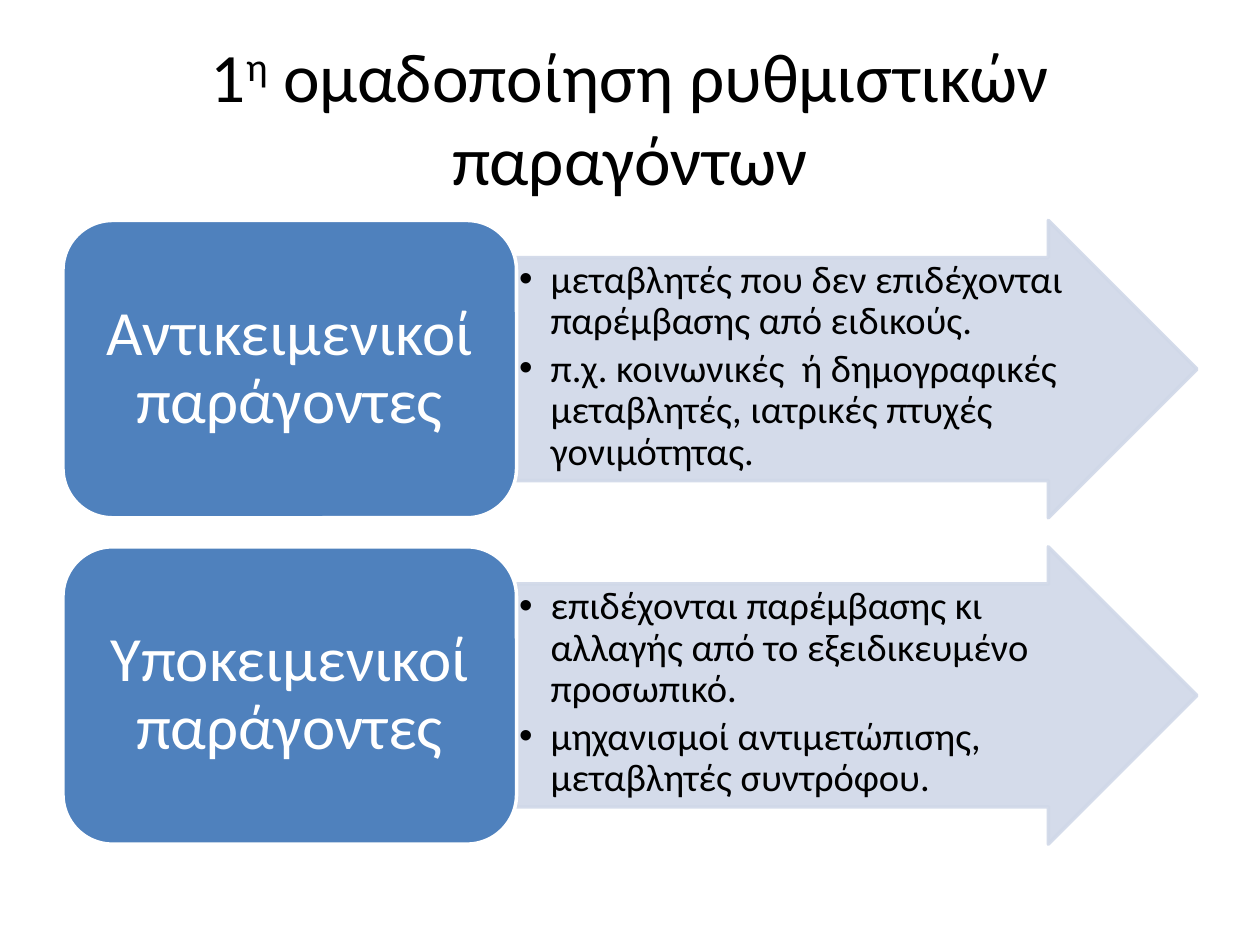
from lxml import etree
from pptx import Presentation
from pptx.dml.color import RGBColor
from pptx.enum.shapes import MSO_SHAPE
from pptx.enum.text import MSO_ANCHOR, PP_ALIGN
from pptx.oxml.ns import qn
from pptx.util import Inches, Pt

ARROW, ROUNDED = MSO_SHAPE.RIGHT_ARROW, MSO_SHAPE.ROUNDED_RECTANGLE
TOP, MIDDLE = MSO_ANCHOR.TOP, MSO_ANCHOR.MIDDLE
LEFT, CENTER = PP_ALIGN.LEFT, PP_ALIGN.CENTER
BLACK = RGBColor(0x00, 0x00, 0x00)
WHITE = RGBColor(0xFF, 0xFF, 0xFF)
BLUE = RGBColor(0x4F, 0x81, 0xBD)
PALE_BLUE = RGBColor(0xD0, 0xD8, 0xE8)


def write_text(shape, paragraphs, size, color=BLACK, align=CENTER, anchor=MIDDLE,
               insets=(0.1, 0.05), line_spacing=None, space_after=0, bullet=False):
    """Write paragraphs, each a list of (text, baseline) runs."""
    frame = shape.text_frame
    frame.word_wrap = True
    frame.vertical_anchor = anchor
    frame.margin_left = frame.margin_right = Inches(insets[0])
    frame.margin_top = frame.margin_bottom = Inches(insets[1])
    for index, runs in enumerate(paragraphs):
        paragraph = frame.add_paragraph() if index else frame.paragraphs[0]
        paragraph.alignment = align
        paragraph.line_spacing = line_spacing
        paragraph.space_after = Pt(space_after)
        if bullet:
            paragraph.level = 1
            properties = paragraph._p.get_or_add_pPr()
            properties.set("marL", str(Inches(0.25)))
            properties.set("indent", str(Inches(-0.25)))
            etree.SubElement(properties, qn("a:buFont")).set("typeface", "Arial")
            etree.SubElement(properties, qn("a:buChar")).set("char", "•")
        for text, baseline in runs:
            run = paragraph.add_run()
            run.text = text
            run.font.name = "Calibri"
            run.font.size = Pt(size)
            run.font.color.rgb = color
            if baseline:
                run._r.get_or_add_rPr().set("baseline", str(baseline * 1000))


def add_block(slide, kind, left, top, width, height, fill, line, opacity=100):
    shape = slide.shapes.add_shape(kind, Inches(left), Inches(top), Inches(width), Inches(height))
    shape.shadow.inherit = False
    shape.fill.solid()
    shape.fill.fore_color.rgb = fill
    shape.line.color.rgb = line
    shape.line.width = Pt(2)
    if opacity < 100:
        for color in shape._element.spPr.iter(qn("a:srgbClr")):
            etree.SubElement(color, qn("a:alpha")).set("val", str(opacity * 1000))
    return shape


presentation = Presentation()
presentation.slide_width = Inches(10)
presentation.slide_height = Inches(7.5)
slide = presentation.slides.add_slide(presentation.slide_layouts[6])

# Title
title = slide.shapes.add_textbox(Inches(0.5), Inches(0.3), Inches(9), Inches(1.25))
write_text(title, [[("1", 0), ("η", 30), (" ομαδοποίηση ρυθμιστικών παραγόντων", 0)]], 39.6)

# Factor groups: a label with an arrow of details, one per row
FACTORS = [
    ("Αντικειμενικοί παράγοντες", [
        "μεταβλητές που δεν επιδέχονται παρέμβασης από ειδικούς.",
        "π.χ. κοινωνικές  ή δημογραφικές μεταβλητές, ιατρικές πτυχές γονιμότητας."]),
    ("Υποκειμενικοί παράγοντες", [
        "επιδέχονται παρέμβασης κι αλλαγής από το εξειδικευμένο προσωπικό.",
        "μηχανισμοί αντιμετώπισης, μεταβλητές συντρόφου."]),
]
ROW_TOP, ROW_PITCH, ROW_HEIGHT = 1.75, 2.59, 2.36
for row, (label, details) in enumerate(FACTORS):
    top = ROW_TOP + row * ROW_PITCH
    arrow = add_block(slide, ARROW, 4.1, top, 5.4, ROW_HEIGHT, PALE_BLUE, PALE_BLUE, opacity=90)
    arrow.adjustments[0] = 0.75
    arrow.adjustments[1] = 0.5
    write_text(arrow, [[(detail, 0)] for detail in details], 22, align=LEFT, anchor=TOP,
               insets=(0.02, 0.02), line_spacing=0.9, space_after=3.3, bullet=True)
    box = add_block(slide, ROUNDED, 0.5, top, 3.6, ROW_HEIGHT, BLUE, WHITE)
    write_text(box, [[(label, 0)]], 36, color=WHITE, insets=(0.15, 0.07), line_spacing=0.9)

presentation.save("out.pptx")
